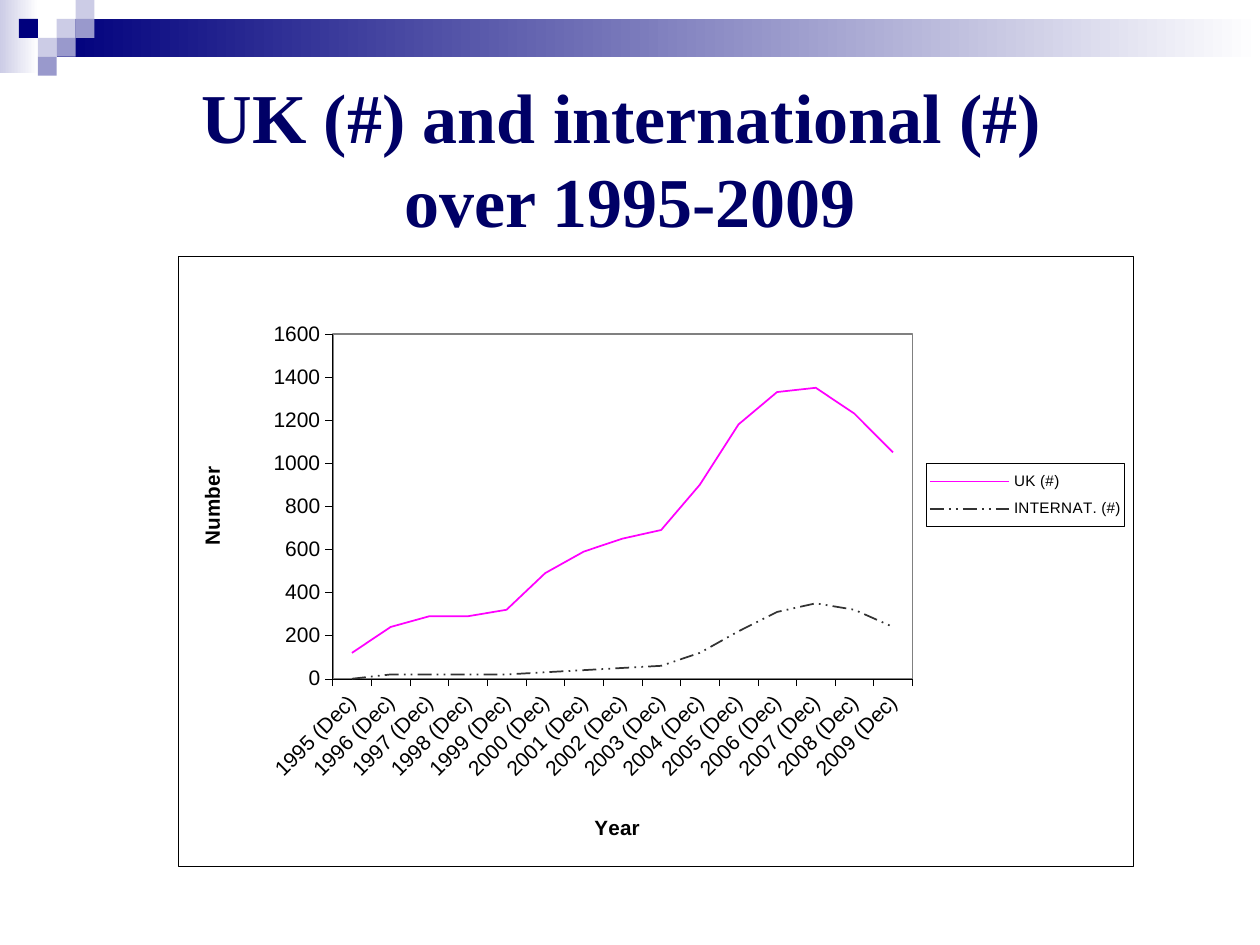
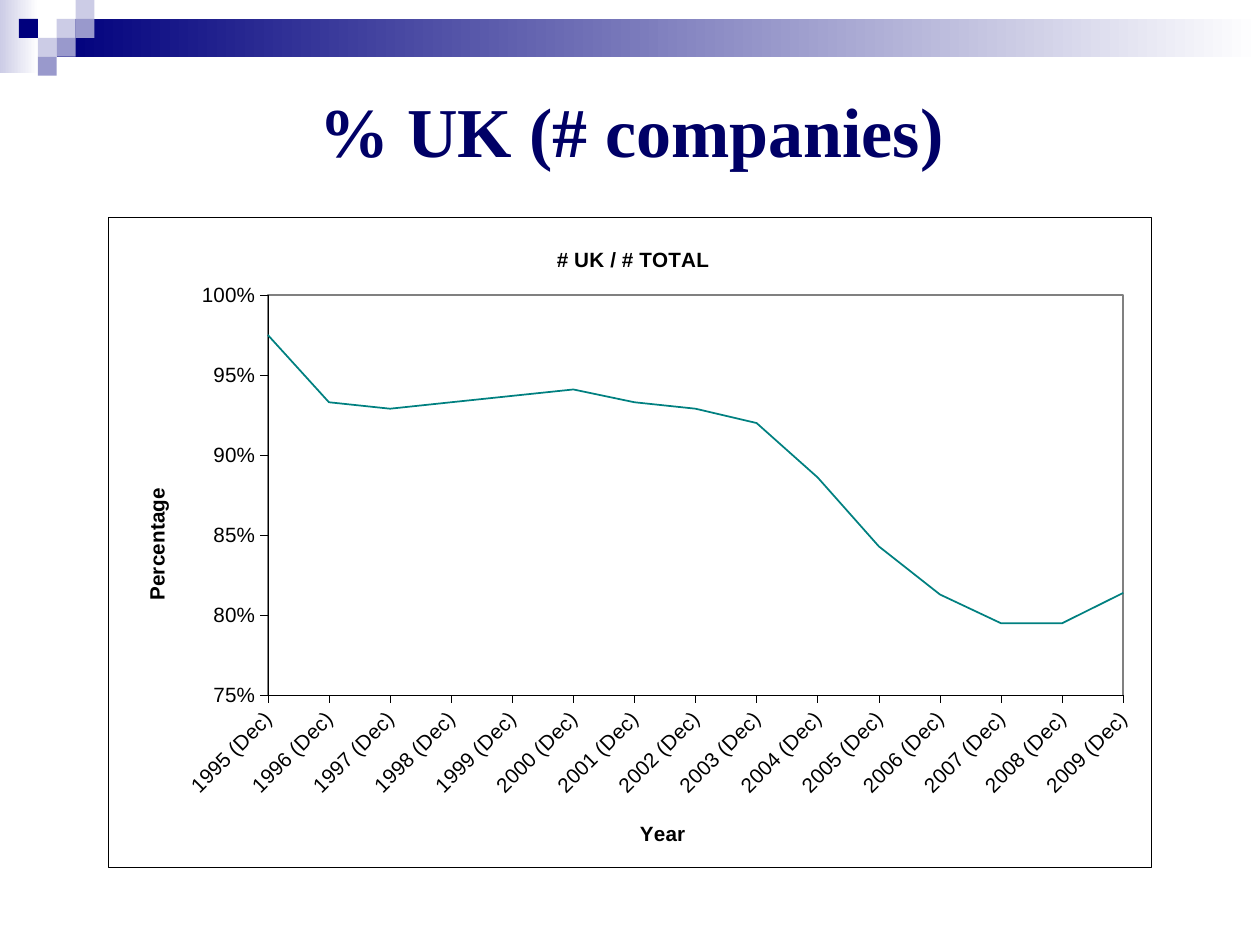
from dataclasses import dataclass

import pptx
import pptx.chart.data
import pptx.dml.color
import pptx.enum.chart
import pptx.enum.dml
import pptx.enum.shapes
import pptx.enum.text
import pptx.oxml
import pptx.oxml.ns
import pptx.util
from pptx.util import Pt

qn = pptx.oxml.ns.qn
CHART_NS = ('xmlns:c="http://schemas.openxmlformats.org/drawingml/2006/chart" '
            'xmlns:a="http://schemas.openxmlformats.org/drawingml/2006/main"')


@dataclass(frozen=True)
class Theme:
    navy: str = "00007D"
    lilac: str = "CCCCE6"
    violet: str = "9999CC"
    white: str = "FFFFFF"
    black: str = "000000"
    title_ink: str = "000066"
    plot_border: str = "808080"
    uk: str = "FF00FF"
    international: str = "333333"
    share: str = "008080"
    title_font: str = "Times New Roman"
    chart_font: str = "Arial"
    title_size: float = 40
    chart_size: float = 11.8
    legend_size: float = 8.7
    hairline: float = 0.25
    series_line: float = 1


def rgb(color):
    return pptx.dml.color.RGBColor.from_string(color)


def set_layout(element, chart_size, box, inner=False):
    """Place a chart part at box (left, top[, width, height]), in points within the chart."""
    for layout in element.findall(qn("c:layout")):
        element.remove(layout)
    target = '<c:layoutTarget val="inner"/>' if inner else ""
    modes = '<c:xMode val="edge"/><c:yMode val="edge"/>'
    fractions = "".join(f'<c:{key} val="{length / whole:.4f}"/>'
                        for key, length, whole in zip("xywh", box, chart_size * 2))
    layout = pptx.oxml.parse_xml(
        f"<c:layout {CHART_NS}><c:manualLayout>{target}{modes}{fractions}"
        "</c:manualLayout></c:layout>")
    leading = [child for child in element if child.tag in (qn("c:tx"), qn("c:legendPos"))]
    element.insert(len(leading), layout)


def frame_properties(fill, border, width):
    return pptx.oxml.parse_xml(
        f'<c:spPr {CHART_NS}><a:solidFill><a:srgbClr val="{fill}"/></a:solidFill>'
        f'<a:ln w="{Pt(width)}"><a:solidFill><a:srgbClr val="{border}"/></a:solidFill></a:ln>'
        "</c:spPr>")


class Deck:
    def __init__(self, theme):
        self.theme = theme
        self.presentation = pptx.Presentation()
        self.presentation.slide_width = Pt(720)
        self.presentation.slide_height = Pt(540)
        self.slide = None

    def new_slide(self):
        self.slide = self.presentation.slides.add_slide(self.presentation.slide_layouts[6])
        self.header()

    def rectangle(self, left, top, width, height, color, fade_to=None):
        block = self.slide.shapes.add_shape(
            pptx.enum.shapes.MSO_SHAPE.RECTANGLE, Pt(left), Pt(top), Pt(width), Pt(height))
        block.shadow.inherit = False
        block.line.fill.background()
        if fade_to is None:
            block.fill.solid()
            block.fill.fore_color.rgb = rgb(color)
        else:
            block.fill.gradient()
            block.fill.gradient_angle = 0
            for stop, stop_color in zip(block.fill.gradient_stops, (color, fade_to)):
                stop.color.rgb = rgb(stop_color)

    def header(self):
        """Draw the fading bands and the mosaic of squares (column, row) on them."""
        theme, cell = self.theme, 10.8
        self.rectangle(0, 0, 22, 42, theme.lilac, theme.white)
        self.rectangle(3 * cell, cell, 720 - 3 * cell, 2 * cell, theme.navy, theme.white)
        mosaic = {
            theme.lilac: [(3, 1), (4, 0), (2, 2)],
            theme.violet: [(4, 1), (3, 2), (2, 3)],
            theme.navy: [(1, 1)],
        }
        for color, squares in mosaic.items():
            for column, row in squares:
                self.rectangle(column * cell, row * cell, cell, cell, color)

    def title(self, text, left, top):
        frame = self.slide.shapes.add_textbox(Pt(left), Pt(top), Pt(648), Pt(108)).text_frame
        frame.word_wrap = True
        frame.vertical_anchor = pptx.enum.text.MSO_ANCHOR.MIDDLE
        heading = frame.paragraphs[0]
        heading.text = text
        heading.alignment = pptx.enum.text.PP_ALIGN.CENTER
        self.style_font(heading.font, self.theme.title_size, True,
                        self.theme.title_font, self.theme.title_ink)

    def style_font(self, font, size=None, bold=False, name=None, color=None):
        font.size = Pt(size or self.theme.chart_size)
        font.bold = bold
        font.name = name or self.theme.chart_font
        font.color.rgb = rgb(color or self.theme.black)

    def line_chart(self, box, plot_box, categories, series, number_format="General"):
        """Add a line chart; series holds (name, values, color, dash) rows."""
        data = pptx.chart.data.CategoryChartData(number_format=number_format)
        data.categories = categories
        for name, values, _, _ in series:
            data.add_series(name, values)
        chart = self.slide.shapes.add_chart(
            pptx.enum.chart.XL_CHART_TYPE.LINE, *map(Pt, box), data).chart
        chart.has_title = False
        chart.has_legend = False
        self.style_font(chart.font)
        plot = chart.plots[0]
        plot.vary_by_categories = False
        for line, (_, _, color, dash) in zip(plot.series, series):
            line.smooth = False
            line.format.line.color.rgb = rgb(color)
            line.format.line.width = Pt(self.theme.series_line)
            if dash:
                line.format.line.dash_style = dash

        theme = self.theme
        space = chart.element.find(qn("c:chart"))
        space.addnext(frame_properties(theme.white, theme.black, theme.hairline))
        plot_area = space.find(qn("c:plotArea"))
        plot_area.append(frame_properties(theme.white, theme.plot_border, 1))
        set_layout(plot_area, box[2:], plot_box, inner=True)
        return chart

    def chart_title(self, owner, element, text, chart_size, position):
        """Title a chart or an axis, with its top left corner at position."""
        owner.has_title = True
        title = owner.chart_title if hasattr(owner, "chart_title") else owner.axis_title
        paragraph = title.text_frame.paragraphs[0]
        paragraph.text = text
        self.style_font(paragraph.font, bold=True)
        set_layout(element.find(qn("c:title")), chart_size, position)
        return title

    def axes(self, chart, chart_size, year_at, value_title, value_at, scale, size):
        low, high, step = scale
        chart.value_axis.minimum_scale = low
        chart.value_axis.maximum_scale = high
        chart.value_axis.major_unit = step
        for axis, text, position in ((chart.category_axis, "Year", year_at),
                                     (chart.value_axis, value_title, value_at)):
            axis.has_major_gridlines = False
            axis.major_tick_mark = pptx.enum.chart.XL_TICK_MARK.OUTSIDE
            axis.minor_tick_mark = pptx.enum.chart.XL_TICK_MARK.NONE
            axis.format.line.color.rgb = rgb(self.theme.black)
            axis.format.line.width = Pt(self.theme.hairline)
            self.style_font(axis.tick_labels.font, size)
            title = self.chart_title(axis, axis._element, text, chart_size, position)
            if text == value_title:
                title.text_frame._txBody.bodyPr.set("rot", "-5400000")
        year_labels = chart.category_axis._element.find(qn("c:txPr"))
        year_labels.find(qn("a:bodyPr")).set("rot", "-2700000")

    def legend(self, chart, chart_size, box):
        chart.has_legend = True
        legend = chart.legend
        legend.position = pptx.enum.chart.XL_LEGEND_POSITION.RIGHT
        legend.include_in_layout = False
        self.style_font(legend.font, self.theme.legend_size)
        element = legend._element
        element.find(qn("c:txPr")).addprevious(
            frame_properties(self.theme.white, self.theme.black, self.theme.hairline))
        set_layout(element, chart_size, box)


YEARS = [f"{year} (Dec)" for year in range(1995, 2010)]
UK_COUNTS = [120, 240, 290, 290, 320, 490, 590, 650, 690, 900, 1180, 1330, 1350, 1230, 1050]
INTERNATIONAL_COUNTS = [0, 20, 20, 20, 20, 30, 40, 50, 60, 120, 220, 310, 350, 320, 240]
UK_SHARES = [0.975, 0.933, 0.929, 0.933, 0.937, 0.941, 0.933, 0.929,
             0.92, 0.886, 0.843, 0.813, 0.795, 0.795, 0.814]


def counts_slide(deck):
    deck.new_slide()
    deck.title("UK (#) and international (#) \vover 1995-2009", 36, 36)
    box = (101.5, 146.5, 546, 348.5)
    size = box[2:]
    dashes = pptx.enum.dml.MSO_LINE.DASH_DOT_DOT
    chart = deck.line_chart(box, (88.5, 44.25, 331.5, 197.25), YEARS, [
        ("UK (#)", UK_COUNTS, deck.theme.uk, None),
        ("INTERNAT. (#)", INTERNATIONAL_COUNTS, deck.theme.international, dashes),
    ])
    deck.axes(chart, size, (236, 317), "Number", (10, 118), (0, 1600, 200), 12)
    deck.legend(chart, size, (428, 118.5, 113, 36))


def share_slide(deck):
    deck.new_slide()
    deck.title("% UK (# companies)", 37, 20)
    box = (62, 124, 596, 371.5)
    size = box[2:]
    chart = deck.line_chart(box, (91, 44.5, 489, 229), YEARS,
                            [("Series 1", UK_SHARES, deck.theme.share, None)], "0%")
    deck.axes(chart, size, (301.5, 343), "Percentage", (18, 152.5),
              (0.75, 1, 0.05), deck.theme.chart_size)
    chart.value_axis.tick_labels.number_format = "0%"
    chart.value_axis.tick_labels.number_format_is_linked = False
    crossing = chart.value_axis._element.find(qn("c:crossBetween"))
    if crossing is None:
        crossing = pptx.oxml.parse_xml(f"<c:crossBetween {CHART_NS}/>")
        chart.value_axis._element.find(qn("c:crosses")).addnext(crossing)
    crossing.set("val", "midCat")
    deck.chart_title(chart, chart.element.find(qn("c:chart")), "# UK / # TOTAL", size, (254, 15))


def main():
    deck = Deck(Theme())
    counts_slide(deck)
    share_slide(deck)
    deck.presentation.save("out.pptx")


if __name__ == "__main__":
    main()
